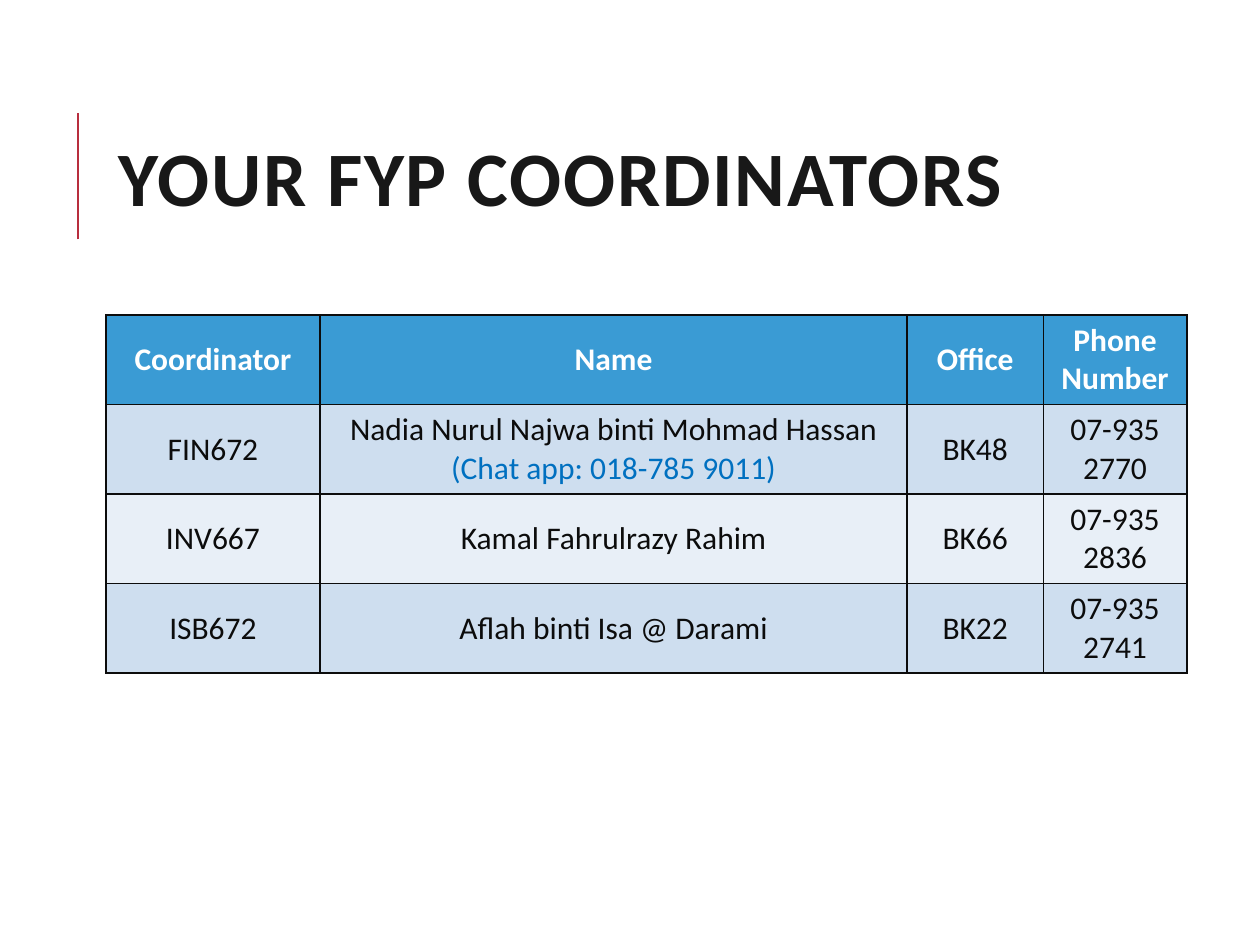
import pptx
import pptx.dml.color
import pptx.enum.shapes
import pptx.enum.text
import pptx.oxml
import pptx.oxml.ns
import pptx.util
from pptx.util import Inches

COLORS = {
    "accent": "B82E3E",
    "title": "181818",
    "header": "3A9BD4",
    "band_dark": "CEDEEF",
    "band_light": "E8EFF7",
    "white": "FFFFFF",
    "ink": "0C0C0C",
    "contact": "0070C0",
}
COLUMN_WIDTHS = [1.7, 4.66, 1.08, 1.14]
ROW_HEIGHT = 0.71
COORDINATORS = [
    ["Coordinator", "Name", "Office", "Phone Number"],
    ["FIN672", "Nadia Nurul Najwa binti Mohmad Hassan\n(Chat app: 018-785 9011)",
     "BK48", "07-935 2770"],
    ["INV667", "Kamal Fahrulrazy Rahim", "BK66", "07-935 2836"],
    ["ISB672", "Aflah binti Isa @ Darami", "BK22", "07-935 2741"],
]


def rgb(name):
    return pptx.dml.color.RGBColor.from_string(COLORS[name])


class SlideBuilder:
    """Holds the text style and the slide being filled."""

    font_name = "Calibri"

    def __init__(self, slide):
        self.slide = slide

    def format_runs(self, paragraph, size, color, bold=False):
        for run in paragraph.runs:
            run.font.name = self.font_name
            run.font.size = pptx.util.Pt(size)
            run.font.bold = bold
            run.font.color.rgb = rgb(color)

    def add_line(self, x1, y1, x2, y2, color, width):
        line = self.slide.shapes.add_connector(
            pptx.enum.shapes.MSO_CONNECTOR.STRAIGHT,
            Inches(x1), Inches(y1), Inches(x2), Inches(y2))
        line.line.color.rgb = rgb(color)
        line.line.width = pptx.util.Pt(width)
        line._element.spPr.append(pptx.oxml.parse_xml(
            f'<a:effectLst {pptx.oxml.ns.nsdecls("a")}/>'))

    def set_title(self, text, left, top, width, height):
        title = self.slide.shapes.title
        title.left, title.top = Inches(left), Inches(top)
        title.width, title.height = Inches(width), Inches(height)
        frame = title.text_frame
        frame.text = text
        frame.word_wrap = True
        frame.vertical_anchor = pptx.enum.text.MSO_ANCHOR.MIDDLE
        paragraph = frame.paragraphs[0]
        paragraph.alignment = pptx.enum.text.PP_ALIGN.LEFT
        paragraph.line_spacing = 0.8
        self.format_runs(paragraph, 44, "title", bold=True)
        for run in paragraph.runs:
            run.font._element.set("spc", "100")

    def add_table(self, rows, left, top, column_widths, row_height):
        table = self.slide.shapes.add_table(
            len(rows), len(column_widths), Inches(left), Inches(top),
            Inches(sum(column_widths)), Inches(row_height * len(rows))).table
        for column, width in zip(table.columns, column_widths):
            column.width = Inches(width)
        for row_index, values in enumerate(rows):
            table.rows[row_index].height = Inches(row_height)
            if row_index == 0:
                fill = "header"
            else:
                fill = "band_dark" if row_index % 2 else "band_light"
            for column_index, text in enumerate(values):
                self.fill_cell(table.cell(row_index, column_index), text, fill)

    def fill_cell(self, cell, text, fill):
        """Write one cell; any second line is a contact detail."""
        is_header = fill == "header"
        cell.fill.solid()
        cell.fill.fore_color.rgb = rgb(fill)
        cell.vertical_anchor = pptx.enum.text.MSO_ANCHOR.MIDDLE
        cell.text_frame.text = text
        for index, paragraph in enumerate(cell.text_frame.paragraphs):
            paragraph.alignment = pptx.enum.text.PP_ALIGN.CENTER
            color = "contact" if index else "white" if is_header else "ink"
            self.format_runs(paragraph, 18, color, bold=is_header)
        self.add_borders(cell, "ink", 1)

    def add_borders(self, cell, color, width):
        properties = cell._tc.get_or_add_tcPr()
        for index, side in enumerate(["lnL", "lnR", "lnT", "lnB"]):
            properties.insert(index, pptx.oxml.parse_xml(
                f'<a:{side} {pptx.oxml.ns.nsdecls("a")} w="{pptx.util.Pt(width)}">'
                f'<a:solidFill><a:srgbClr val="{COLORS[color]}"/></a:solidFill>'
                f'</a:{side}>'))


def main():
    presentation = pptx.Presentation()
    presentation.slide_width = Inches(10)
    presentation.slide_height = Inches(7.5)
    title_only = presentation.slide_layouts[5]
    builder = SlideBuilder(presentation.slides.add_slide(title_only))
    builder.add_line(0.62, 1.9, 0.62, 0.9, "accent", 1.5)
    builder.set_title("YOUR FYP COORDINATORS", 0.84, 0.64, 8.83, 1.64)
    builder.add_table(COORDINATORS, 0.84, 2.5, COLUMN_WIDTHS, ROW_HEIGHT)
    presentation.save("out.pptx")


if __name__ == "__main__":
    main()
